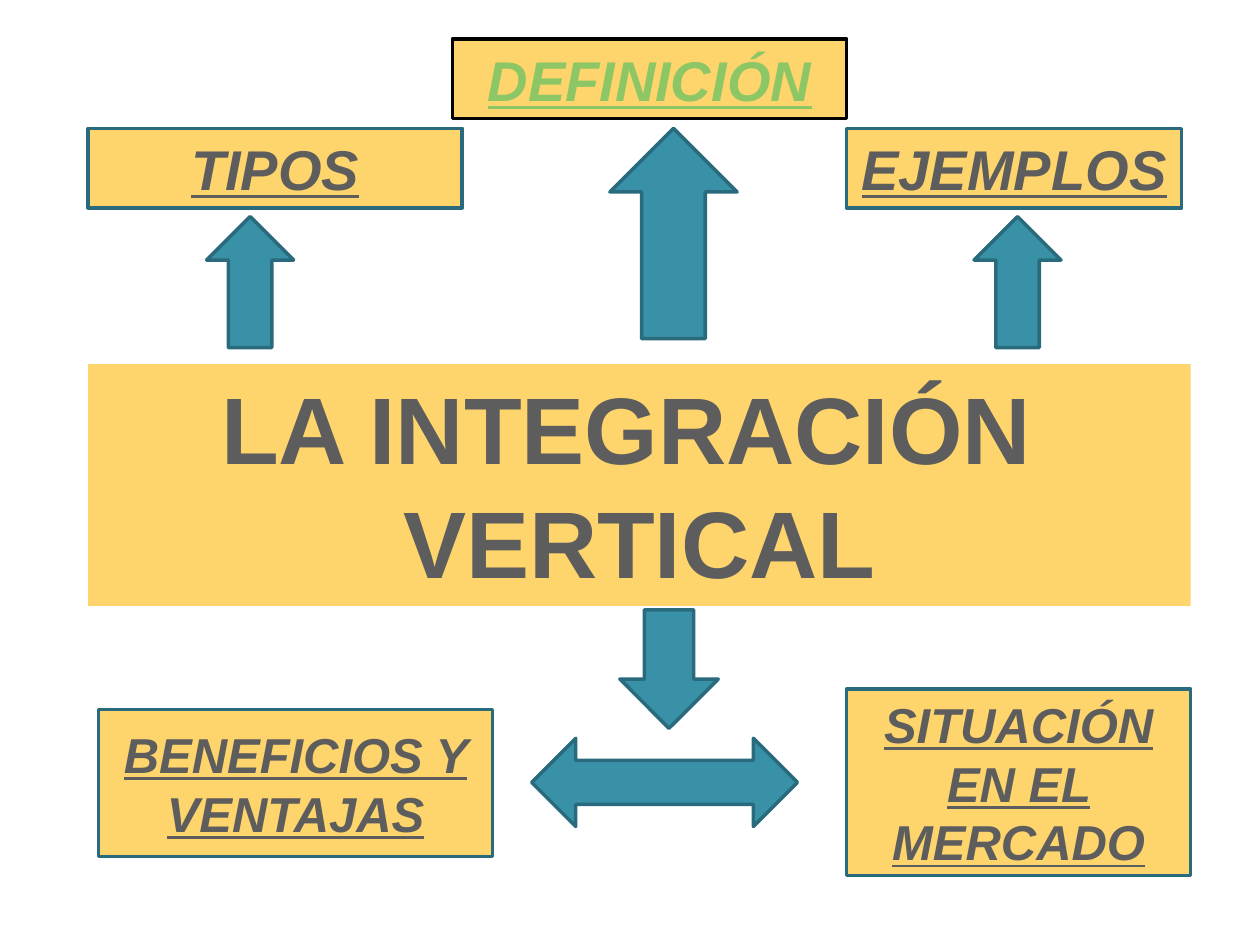
from collections import namedtuple
from dataclasses import dataclass

from pptx import Presentation
from pptx.dml.color import RGBColor
from pptx.enum.shapes import MSO_SHAPE as Preset
from pptx.enum.text import MSO_ANCHOR as Anchor, PP_ALIGN as Align
from pptx.util import Pt

Box = namedtuple("Box", "left top width height")


@dataclass(frozen=True)
class Theme:
    font: str = "Arial"
    panel: str = "FED46C"
    arrow: str = "3891A7"
    border: str = "296B7C"
    active_border: str = "000000"
    text: str = "5D5D5D"
    active_text: str = "8DC765"
    title_size: int = 54
    top_size: int = 32
    bottom_size: int = 28
    border_width: int = 2


THEME = Theme()


def add_block(slide, region, part, preset, fill, border=None):
    """Add a filled preset; part is relative to the region."""
    block = slide.shapes.add_shape(
        preset, Pt(region.left + part.left), Pt(region.top + part.top),
        Pt(part.width), Pt(part.height))
    block.shadow.inherit = False
    block.fill.solid()
    block.fill.fore_color.rgb = RGBColor.from_string(fill)
    if border:
        block.line.color.rgb = RGBColor.from_string(border)
        block.line.width = Pt(THEME.border_width)
    else:
        block.line.fill.background()
    return block


def write_lines(block, lines, color, anchor=Anchor.MIDDLE, **font_format):
    frame = block.text_frame
    frame.word_wrap = True
    frame.vertical_anchor = anchor
    for index, line in enumerate(lines):
        paragraph = frame.add_paragraph() if index else frame.paragraphs[0]
        paragraph.alignment = Align.CENTER
        run = paragraph.add_run()
        run.text = line
        run.font.color.rgb = RGBColor.from_string(color)
        for name, value in {"name": THEME.font, "bold": True, **font_format}.items():
            setattr(run.font, name, value)


def add_topic(slide, region, part, label, size, active=False):
    border = THEME.active_border if active else THEME.border
    color = THEME.active_text if active else THEME.text
    topic = add_block(slide, region, part, Preset.RECTANGLE, THEME.panel, border)
    write_lines(topic, [label], color, size=Pt(size), italic=True, underline=True)


def add_arrow(slide, region, part, preset):
    add_block(slide, region, part, preset, THEME.arrow, THEME.border)


def add_top_topics(slide, region):
    row, height = 51.1, 45.4
    # Topics
    for label, left, top, width, active in (
            ("TIPOS", 0, row, 213.8, False),
            ("DEFINICIÓN", 208.1, 0, 225.4, True),
            ("EJEMPLOS", 433.4, row, 191.5, False)):
        add_topic(slide, region, Box(left, top, width, height), label,
                  THEME.top_size, active)
    # Arrows up to the topics
    for part in (Box(67.7, 101.5, 49.7, 74.9),
                 Box(298.1, row, 72.7, 120.2),
                 Box(506.2, 101.5, 49.7, 74.9)):
        add_arrow(slide, region, part, Preset.UP_ARROW)


def add_title_band(slide, region):
    band = add_block(slide, region, Box(0, 0, region.width, region.height),
                     Preset.RECTANGLE, THEME.panel)
    write_lines(band, ["LA INTEGRACIÓN ", "VERTICAL"], THEME.text, Anchor.TOP,
                size=Pt(THEME.title_size))


def add_bottom_topics(slide, region):
    # Topics
    for label, part in (
            ("BENEFICIOS Y VENTAJAS", Box(5.8, 56.9, 225.4, 84.2)),
            ("SITUACIÓN EN EL MERCADO", Box(433.4, 45.3, 196.6, 106.6))):
        add_topic(slide, region, part, label, THEME.bottom_size)
    # Arrows down and to both sides
    add_arrow(slide, region, Box(253.4, 73.4, 151.9, 50.4), Preset.LEFT_RIGHT_ARROW)
    add_arrow(slide, region, Box(303.8, 0, 56.2, 67.7), Preset.DOWN_ARROW)


def main():
    deck = Presentation()
    deck.slide_width, deck.slide_height = Pt(720), Pt(540)
    slide = deck.slides.add_slide(deck.slide_layouts[6])
    left, width = 50.4, 630
    add_top_topics(slide, Box(left, 22.3, width, 176.4))
    add_title_band(slide, Box(left, 208.1, width, 138.2))
    add_bottom_topics(slide, Box(left, 348.5, width, 151.9))
    deck.save("out.pptx")


if __name__ == "__main__":
    main()
